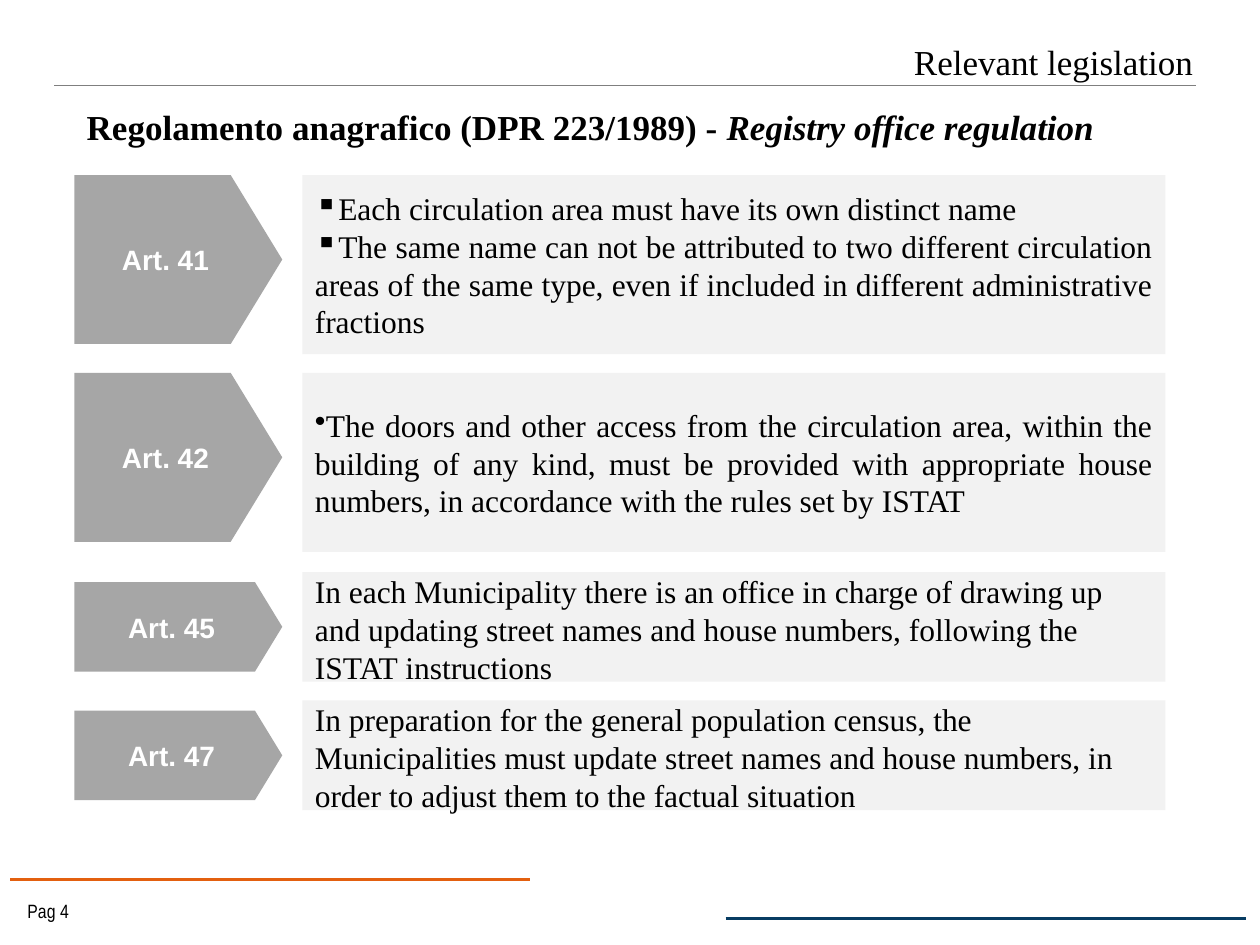
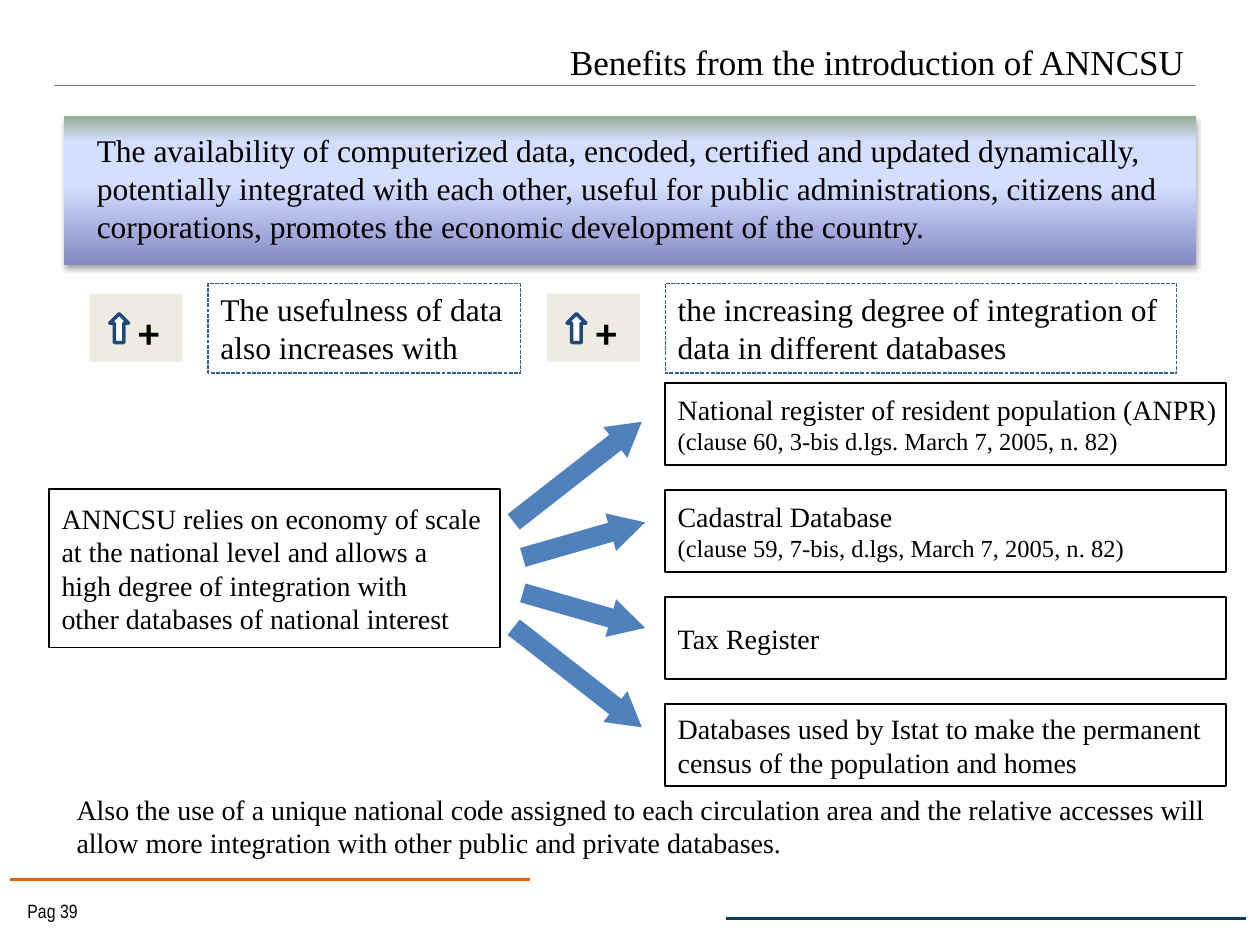
from lxml import etree
from pptx import Presentation
from pptx import util as u
from pptx.dml.color import RGBColor
from pptx.enum import dml, shapes, text
from pptx.oxml import ns

COLORS = {
    "black": "000000", "white": "FFFFFF", "rule": "7F7F7F", "orange": "E3600F",
    "blue": "073C62", "tag": "A6A6A6", "panel": "F2F2F2", "sand": "EEECE1",
    "navy": "1F497D", "dash": "3A5F8C", "arrow": "4F81BD",
}
SERIF = "Times New Roman"
RECTANGLE = shapes.MSO_SHAPE.RECTANGLE
LEFT, RIGHT = text.PP_ALIGN.LEFT, text.PP_ALIGN.RIGHT
CENTER, JUSTIFY = text.PP_ALIGN.CENTER, text.PP_ALIGN.JUSTIFY
TOP, MIDDLE = text.MSO_ANCHOR.TOP, text.MSO_ANCHOR.MIDDLE


def add_block(slide, kind, box, fill=None, line=None, width=1):
    lengths = [u.Inches(value) for value in box]
    if kind is None:
        return slide.shapes.add_textbox(*lengths)
    shape = slide.shapes.add_shape(kind, *lengths)
    shape.shadow.inherit = False
    if fill:
        shape.fill.solid()
        shape.fill.fore_color.rgb = RGBColor.from_string(COLORS[fill])
    else:
        shape.fill.background()
    if line:
        shape.line.color.rgb = RGBColor.from_string(COLORS[line])
        shape.line.width = u.Pt(width)
    else:
        shape.line.fill.background()
    return shape


def write(shape, lines, size, font=SERIF, color="black", bold=False,
          align=LEFT, anchor=TOP, wrap=True, bullet=None):
    frame = shape.text_frame
    frame.text = "\n".join(lines)
    frame.word_wrap = wrap
    frame.vertical_anchor = anchor
    for paragraph in frame.paragraphs:
        paragraph.alignment = align
        if bullet:
            properties = paragraph._p.get_or_add_pPr()
            properties.set("marL", "0")
            properties.set("indent", "0")
            etree.SubElement(properties, ns.qn("a:buChar"), char=bullet)
        for run in paragraph.runs:
            run.font.size = u.Pt(size)
            run.font.name = font
            run.font.bold = bold
            run.font.color.rgb = RGBColor.from_string(COLORS[color])
    return frame


presentation = Presentation()
presentation.slide_width = u.Inches(10)
presentation.slide_height = u.Inches(7.5)

rules = [
    (0.43, 9.49, 0.68, "rule", 0.75),
    (0.08, 4.21, 6.98, "orange", 2),
    (5.76, 9.89, 7.29, "blue", 2),
]
pages = [
    ("Relevant legislation", "Pag 4"),
    ("Benefits from the introduction of ANNCSU ", "Pag 39"),
]
slides = []
for title, page in pages:
    slide = presentation.slides.add_slide(presentation.slide_layouts[6])
    slides.append(slide)
    for start, end, y, color, width in rules:
        rule = slide.shapes.add_connector(
            shapes.MSO_CONNECTOR.STRAIGHT,
            u.Inches(start), u.Inches(y), u.Inches(end), u.Inches(y))
        rule.line.color.rgb = RGBColor.from_string(COLORS[color])
        rule.line.width = u.Pt(width)
        etree.SubElement(rule._element.spPr, ns.qn("a:effectLst"))
    write(add_block(slide, None, (0.12, 7.09, 1.17, 0.28)), [page], 11, "Arial Narrow")
    write(add_block(slide, None, (1.07, 0.21, 8.5, 0.55)), [title], 20,
          align=RIGHT, anchor=MIDDLE)

legislation, benefits = slides

heading = write(add_block(legislation, None, (0.59, 0.79, 8.5, 0.43)),
                ["Regolamento anagrafico (DPR 223/1989) - "], 20, bold=True)
english = heading.paragraphs[0].add_run()
english.text = "Registry office regulation"
english.font.size = u.Pt(20)
english.font.name = SERIF
english.font.bold = True
english.font.italic = True
english.font.color.rgb = RGBColor.from_string(COLORS["black"])

articles = [
    ("Art. 41", 1.39, 1.42, 1.39, 1.34, "▪", [
        "Each circulation area must have its own distinct name",
        "The same name can not be attributed to two different circulation areas "
        "of the same type, even if included in different administrative fractions"]),
    ("Art. 42", 2.96, 1.42, 2.96, 1.34, "•", [
        "The doors and other access from the circulation area, within the building "
        "of any kind, must be provided with appropriate house numbers, in accordance "
        "with the rules set by ISTAT"]),
    ("Art. 45", 4.54, 0.87, 4.62, 0.71, None, [
        "In each Municipality there is an office in charge of drawing up and updating "
        "street names and house numbers, following the ISTAT instructions"]),
    ("Art. 47", 5.56, 0.87, 5.64, 0.71, None, [
        "In preparation for the general population census, the Municipalities must "
        "update street names and house numbers, in order to adjust them to the "
        "factual situation"]),
]
for label, top, height, tag_top, tag_height, bullet, lines in articles:
    tag = add_block(legislation, shapes.MSO_SHAPE.PENTAGON,
                    (0.59, tag_top, 1.65, tag_height), "tag")
    tag.adjustments[0] = 0.305
    write(tag, [label], 16, "Arial", "white", True, CENTER, MIDDLE)
    panel = add_block(legislation, RECTANGLE, (2.4, top, 6.85, height), "panel")
    frame = write(panel, lines, 18, align=JUSTIFY if bullet else LEFT,
                  anchor=MIDDLE, bullet=bullet)
    frame.margin_top = u.Inches(0 if bullet else 0.03)
    frame.margin_bottom = 0

write(add_block(benefits, None, (0.51, 6.24, 9.37, 0.64)), [
    "Also the use of a unique national code assigned to each circulation area and "
    "the relative accesses will allow more integration with other public and "
    "private databases."], 16)

banner = add_block(benefits, RECTANGLE, (0.51, 0.92, 8.98, 1.18))
banner.fill.gradient()
banner.fill.gradient_angle = 90
stops = banner._element.spPr.find(".//" + ns.qn("a:gsLst"))
for stop in list(stops):
    stops.remove(stop)
for position, color in [(0, "8488C4"), (53, "D4DEFF"), (83, "D4DEFF"), (100, "96AB94")]:
    stop = etree.SubElement(stops, ns.qn("a:gs"), pos=str(position * 1000))
    etree.SubElement(stop, ns.qn("a:srgbClr"), val=color)
effects = banner._element.spPr.find(ns.qn("a:effectLst"))
shadow = etree.SubElement(effects, ns.qn("a:outerShdw"), blurRad="40000",
                          dist="23000", dir="5400000", rotWithShape="0")
shadow_color = etree.SubElement(shadow, ns.qn("a:srgbClr"), val=COLORS["black"])
etree.SubElement(shadow_color, ns.qn("a:alpha"), val="35000")
write(add_block(benefits, None, (0.67, 0.99, 8.74, 1.01)), [
    "The availability of computerized data, encoded, certified and updated "
    "dynamically, potentially integrated with each other, useful for public "
    "administrations, citizens and corporations, promotes the economic development "
    "of the country."], 18)

increases = [
    (0.71, 1.65, 2.48, "The usefulness of data also increases with"),
    (4.34, 5.28, 4.06, "the increasing degree of integration of data in different databases"),
]
for icon_left, left, width, statement in increases:
    add_block(benefits, RECTANGLE, (icon_left, 2.33, 0.74, 0.54), "sand")
    write(add_block(benefits, None, (icon_left + 0.29, 2.38, 0.45, 0.57)),
          ["+"], 24, "Calibri", bold=True)
    add_block(benefits, shapes.MSO_SHAPE.UP_ARROW,
              (icon_left + 0.16, 2.49, 0.15, 0.23), "white", "navy", 2)
    dashed = add_block(benefits, RECTANGLE, (left, 2.25, width, 0.71), None, "dash", 0.75)
    dashed.line.dash_style = dml.MSO_LINE.SQUARE_DOT
    write(dashed, [statement], 18)

boxes = [
    ((0.39, 3.88, 3.58, 1.26), [
        "ANNCSU relies on economy of scale", "at the national level and allows a",
        "high degree of integration with", "other databases of national interest"]),
]
databases = [
    ["National register of resident population (ANPR)",
     "(clause 60, 3-bis d.lgs. March 7, 2005, n. 82)"],
    ["Cadastral Database", "(clause 59, 7-bis, d.lgs, March 7, 2005, n. 82)"],
    ["Tax Register"],
    ["Databases used by Istat to make the permanent",
     "census of the population and homes"],
]
for row, lines in enumerate(databases):
    boxes.append(((5.28, 3.04 + 0.85 * row, 4.45, 0.65), lines))
for box, lines in boxes:
    frame = write(add_block(benefits, RECTANGLE, box, "white", "black"), lines, 16,
                  anchor=MIDDLE, wrap=False)
    for paragraph in frame.paragraphs:
        if paragraph.text.startswith("(clause"):
            paragraph.runs[0].font.size = u.Pt(14)

arrows = [
    (3.94, 3.59, 1.29, -38, 0.858),
    (4.13, 4.13, 1.01, -16, 0.916),
    (4.13, 4.69, 1.01, 16, 0.916),
    (3.94, 5.22, 1.29, 38, 0.858),
]
for left, top, length, angle, head in arrows:
    arrow = add_block(benefits, shapes.MSO_SHAPE.RIGHT_ARROW,
                      (left, top, length, 0.31), "arrow")
    arrow.rotation = angle
    arrow.adjustments[1] = head

presentation.save("out.pptx")
